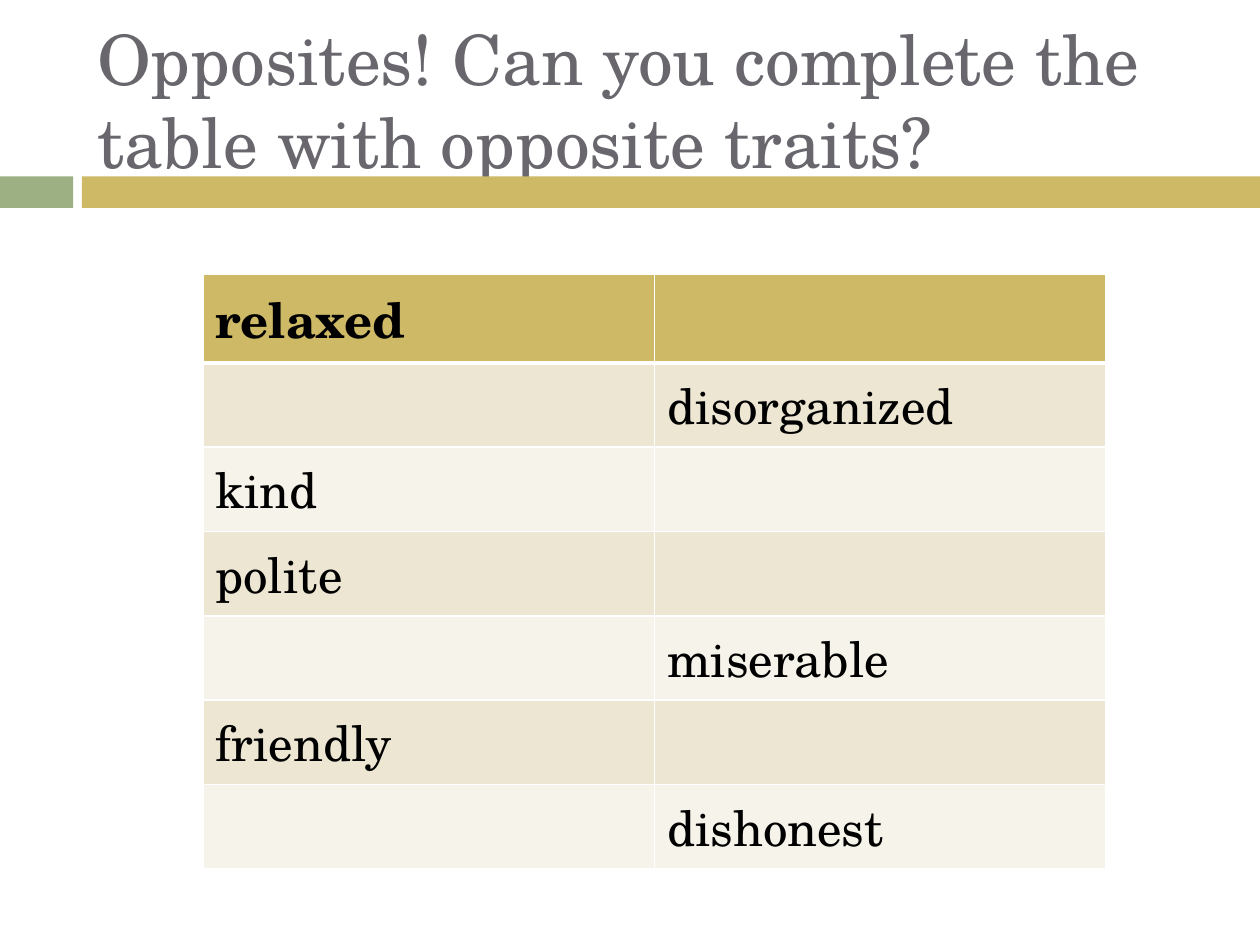
"""Build a slide with a table of opposite character traits to complete."""
from dataclasses import dataclass

from lxml import etree
from pptx import Presentation
from pptx.dml.color import RGBColor
from pptx.enum.shapes import MSO_SHAPE
from pptx.enum.text import MSO_ANCHOR, MSO_AUTO_SIZE, PP_ALIGN
from pptx.oxml.ns import qn
from pptx.util import Inches, Pt

RECTANGLE = MSO_SHAPE.RECTANGLE
MIDDLE = MSO_ANCHOR.MIDDLE
NO_AUTOFIT = MSO_AUTO_SIZE.NONE
LEFT = PP_ALIGN.LEFT
TITLE_ONLY = 5

TITLE = "Opposites! Can you complete the table with opposite traits?"
TRAITS = [
    ("relaxed", ""),
    ("", "disorganized"),
    ("kind", ""),
    ("polite", ""),
    ("", "miserable"),
    ("friendly", ""),
    ("", "dishonest"),
]


@dataclass(frozen=True)
class Theme:
    """Colours, font and sizes of the slide."""
    font: str = "TeX Gyre Schola"
    title: str = "69676D"
    text: str = "000000"
    green: str = "9CB084"
    gold: str = "CEB966"
    bands: tuple = ("F6F3EA", "EDE6D3")
    border: str = "FFFFFF"
    title_size: float = 39.6
    cell_size: float = 28
    thin: float = 1
    thick: float = 3


def write(tf, text, *, font, size, color, bold=False):
    """Put one formatted run into a text frame."""
    p = tf.paragraphs[0]
    p.alignment = LEFT
    r = p.add_run()
    r.text = text
    r.font.name = font
    r.font.size = Pt(size)
    r.font.bold = bold
    r.font.color.rgb = RGBColor.from_string(color)


def set_border(cell, side, color, width):
    """Add a solid border on one side of a table cell."""
    tcPr = cell._tc.get_or_add_tcPr()
    ln = etree.SubElement(tcPr, qn(f"a:ln{side}"), w=str(Pt(width)))
    fill = etree.SubElement(ln, qn("a:solidFill"))
    etree.SubElement(fill, qn("a:srgbClr"), val=color)


class SlideBuilder:
    """Holds the theme and the current slide."""

    def __init__(self, prs, theme):
        """Start a slide that has only a title placeholder."""
        self.theme = theme
        self.s = prs.slides.add_slide(prs.slide_layouts[TITLE_ONLY])

    def bar(self, x, y, w, h, color):
        """Draw a plain filled bar."""
        sp = self.s.shapes.add_shape(
            RECTANGLE, Inches(x), Inches(y), Inches(w), Inches(h))
        sp.shadow.inherit = False
        sp.fill.solid()
        sp.fill.fore_color.rgb = RGBColor.from_string(color)
        sp.line.fill.background()

    def title(self, text, x, y, w, h):
        """Place and fill the title placeholder."""
        sp = self.s.shapes.title
        sp.left, sp.top, sp.width, sp.height = map(Inches, (x, y, w, h))
        tf = sp.text_frame
        tf.word_wrap = True
        tf.auto_size = NO_AUTOFIT
        tf.vertical_anchor = MIDDLE
        write(tf, text, font=self.theme.font, size=self.theme.title_size,
              color=self.theme.title)

    def table(self, rows, x, y, w, row_height):
        """Draw a banded table whose first row is a header."""
        table = self.s.shapes.add_table(
            len(rows), len(rows[0]), Inches(x), Inches(y), Inches(w),
            Inches(row_height * len(rows))).table
        for i, row in enumerate(rows):
            for j, text in enumerate(row):
                self.cell(table.cell(i, j), text, i)

    def cell(self, cell, text, row):
        """Format one cell according to its row."""
        t = self.theme
        header = row == 0
        widths = {"L": t.thin, "R": t.thin,
                  "T": t.thick if row == 1 else t.thin,
                  "B": t.thick if header else t.thin}
        for side, width in widths.items():
            set_border(cell, side, t.border, width)
        cell.fill.solid()
        cell.fill.fore_color.rgb = RGBColor.from_string(
            t.gold if header else t.bands[row % 2])
        if text:
            write(cell.text_frame, text, font=t.font, size=t.cell_size,
                  color=t.text, bold=header)


def main():
    """Build and save the slide."""
    prs = Presentation()
    prs.slide_width, prs.slide_height = Inches(10), Inches(7.5)
    theme = Theme()
    slide = SlideBuilder(prs, theme)
    slide.bar(0, 1.4, 0.58, 0.25, theme.green)
    slide.bar(0.65, 1.4, 9.35, 0.25, theme.gold)
    slide.title(TITLE, 0.67, 0.25, 8.92, 1.08)
    slide.table(TRAITS, 1.61, 2.18, 7.17, 0.61)
    # The title must stay in front of the bars.
    tree = slide.s.shapes._spTree
    tree.insert(4, slide.s.shapes.title._element)
    prs.save("out.pptx")


if __name__ == "__main__":
    main()
